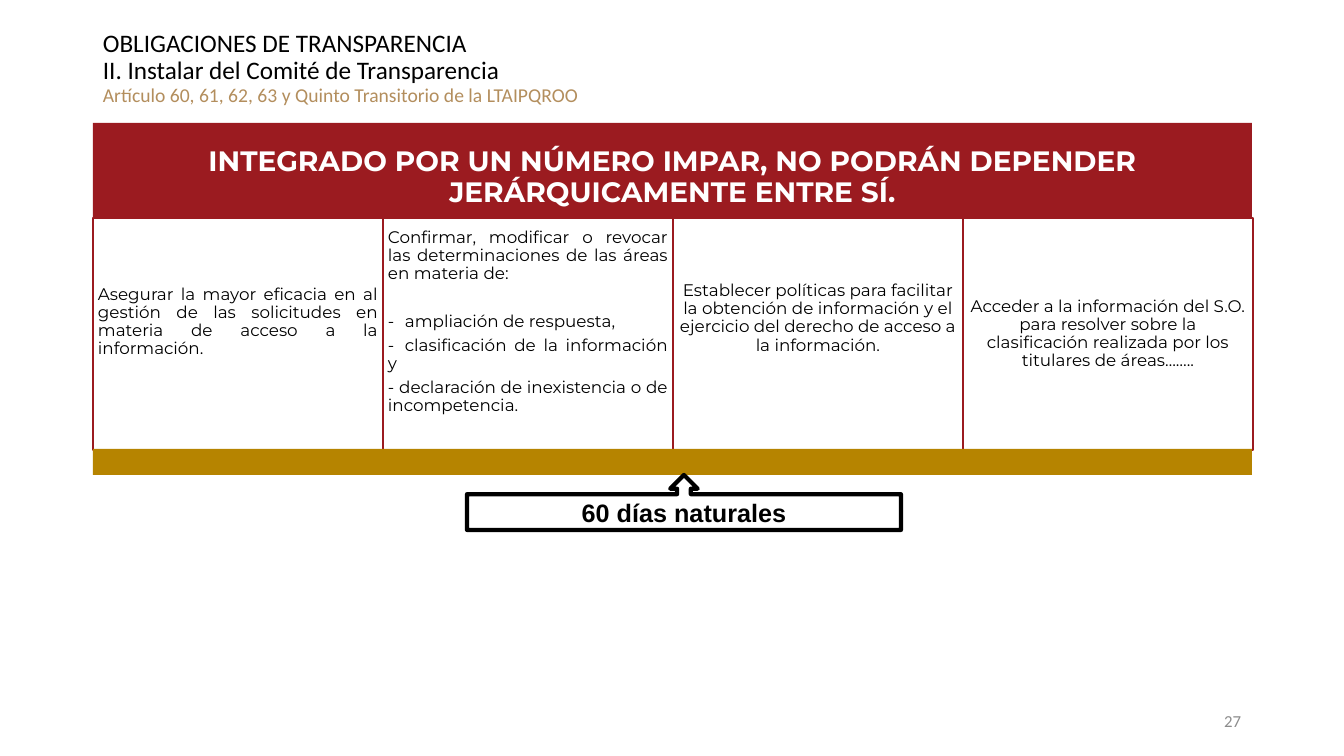
from lxml.etree import SubElement
from pptx import Presentation
from pptx.dml.color import RGBColor
from pptx.enum.shapes import MSO_SHAPE as Shape
from pptx.enum.text import MSO_ANCHOR as Anchor, PP_ALIGN as Align
from pptx.oxml.ns import qn
from pptx.util import Pt

EMU_PER_PX = 914400 / 100.8

COLORS = {
    "black": "000000",
    "white": "FFFFFF",
    "red": "9B1B20",
    "gold": "B68400",
    "sand": "B38E5D",
    "gray": "8C8C8C",
}

LEFT, CELL_TOP = 93, 218
CELL_WIDTH, CELL_HEIGHT = 290, 232
TOTAL_WIDTH = 4 * CELL_WIDTH - 1
CELL_INSET = 5
DASH_TAB = 17

# Paragraphs, alignment and bottom inset of each cell
CELLS = [
    (["Asegurar la mayor eficacia en al gestión de las solicitudes en "
      "materia de acceso a la información."], Align.JUSTIFY, 29),
    (["Confirmar, modificar o revocar las determinaciones de las áreas "
      "en materia de:",
      "-\tampliación de respuesta,",
      "-\tclasificación de la información y",
      "- declaración de inexistencia o de incompetencia."], Align.JUSTIFY, 29),
    (["Establecer políticas para facilitar la obtención de información y el "
      "ejercicio del derecho de acceso a la información."], Align.CENTER, 36),
    (["Acceder a la información del S.O. para resolver sobre la "
      "clasificación realizada por los titulares de áreas…….."],
     Align.CENTER, CELL_INSET),
]


def px(length):
    return round(length * EMU_PER_PX)


def rgb(name):
    return RGBColor.from_string(COLORS[name])


def add_box(slide, kind, box, fill, line=None, line_width=1):
    shape = slide.shapes.add_shape(kind, *map(px, box))
    shape.shadow.inherit = False
    shape.fill.solid()
    shape.fill.fore_color.rgb = rgb(fill)
    if line:
        shape.line.color.rgb = rgb(line)
        shape.line.width = Pt(line_width)
    else:
        shape.line.fill.background()
    return shape


def set_frame(shape, inset=None, bottom=None):
    frame = shape.text_frame
    frame.word_wrap = True
    frame.vertical_anchor = Anchor.MIDDLE
    if inset is not None:
        frame.margin_left = frame.margin_right = frame.margin_top = px(inset)
        frame.margin_bottom = px(inset if bottom is None else bottom)
    return frame


def add_text_box(slide, box):
    return set_frame(slide.shapes.add_textbox(*map(px, box)))


def add_tab(paragraph, position):
    tabs = SubElement(paragraph._p.get_or_add_pPr(), qn("a:tabLst"))
    SubElement(tabs, qn("a:tab"), pos=str(px(position)), algn="l")


def write(paragraph, text, font, size, color, align=Align.LEFT, bold=False,
          line_spacing=None, space_after=None):
    paragraph.text = text
    paragraph.alignment = align
    if line_spacing:
        paragraph.line_spacing = line_spacing
    if space_after is not None:
        paragraph.space_after = Pt(space_after)
    if "\t" in text:
        add_tab(paragraph, DASH_TAB)
    paragraph.font.name = font
    paragraph.font.size = Pt(size)
    paragraph.font.bold = bold
    paragraph.font.color.rgb = rgb(color)


def add_title(slide):
    frame = add_text_box(slide, (LEFT, 20, TOTAL_WIDTH, 97))
    lines = [
        ("OBLIGACIONES DE TRANSPARENCIA", 18, "black"),
        ("II. Instalar del Comité de Transparencia", 18, "black"),
        ("Artículo 60, 61, 62, 63 y Quinto Transitorio de la LTAIPQROO",
         14, "sand"),
    ]
    for index, (text, size, color) in enumerate(lines):
        paragraph = frame.add_paragraph() if index else frame.paragraphs[0]
        write(paragraph, text, "Calibri", size, color, line_spacing=0.9)


def add_header(slide):
    header = add_box(slide, Shape.RECTANGLE, (LEFT, 123, TOTAL_WIDTH, 110), "red")
    write(set_frame(header, 8).paragraphs[0],
          "INTEGRADO POR UN NÚMERO IMPAR, NO PODRÁN DEPENDER "
          "JERÁRQUICAMENTE ENTRE SÍ.",
          "Montserrat", 20, "white", Align.CENTER, True, 0.9, 7)


def add_cell(slide, column, texts, align, bottom):
    box = (LEFT + column * CELL_WIDTH, CELL_TOP, CELL_WIDTH, CELL_HEIGHT)
    cell = add_box(slide, Shape.RECTANGLE, box, "white", "red")
    frame = set_frame(cell, CELL_INSET, bottom)
    for index, text in enumerate(texts):
        paragraph = frame.add_paragraph() if index else frame.paragraphs[0]
        # An introduction stands clear of the list below it
        space_after = 21.5 if text.endswith(":") else 4.2
        write(paragraph, text, "Montserrat", 12, "black", align,
              line_spacing=0.9, space_after=space_after)


def add_deadline(slide):
    callout = add_box(slide, Shape.UP_ARROW_CALLOUT, (467, 475, 434, 55),
                      "white", "black", 3)
    write(set_frame(callout).paragraphs[0], "60 días naturales",
          "Arial", 18, "black", Align.CENTER, True)


def add_page_number(slide):
    frame = add_text_box(slide, (949, 701, 302, 40))
    write(frame.paragraphs[0], "27", "Calibri", 12, "gray", Align.RIGHT)


def main():
    presentation = Presentation()
    presentation.slide_width = px(1344)
    presentation.slide_height = px(756)
    slide = presentation.slides.add_slide(presentation.slide_layouts[6])

    add_title(slide)

    # Committee duties: header, four cells and closing bar
    add_header(slide)
    for column, (texts, align, bottom) in enumerate(CELLS):
        add_cell(slide, column, texts, align, bottom)
    add_box(slide, Shape.RECTANGLE, (LEFT, 449, TOTAL_WIDTH, 26), "gold")

    # Page number and deadline
    add_page_number(slide)
    add_deadline(slide)
    presentation.save("out.pptx")


if __name__ == "__main__":
    main()
